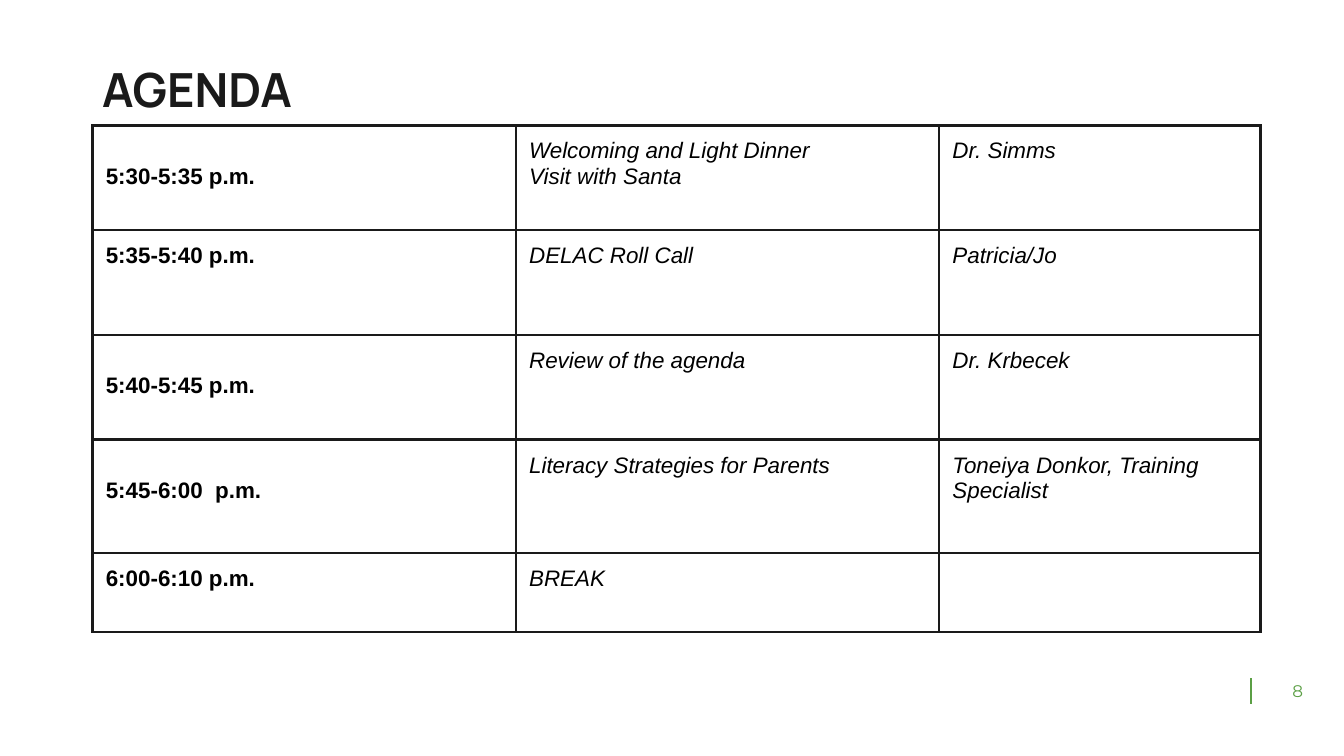
from lxml import etree
from pptx import Presentation
from pptx.dml.color import RGBColor
from pptx.enum.shapes import MSO_CONNECTOR
from pptx.enum.text import MSO_ANCHOR, PP_ALIGN
from pptx.oxml.ns import qn
from pptx.util import Cm, Pt

INK = RGBColor(0x1A, 0x1A, 0x1A)
BLACK = RGBColor(0, 0, 0)
GREEN = RGBColor(0x5B, 0x9F, 0x45)

COLS = (8, 8, 6.07)
ROWS = (1.98, 1.98, 1.98, 2.14, 1.5)
PAD = 0.25
DROP = 0.48  # one line of 12 pt text

# time, topic, speaker, whether the time sits one line lower
AGENDA = [
    ("5:30-5:35 p.m.", "Welcoming and Light Dinner\nVisit with Santa", "Dr. Simms", True),
    ("5:35-5:40 p.m.", "DELAC Roll Call", "Patricia/Jo", False),
    ("5:40-5:45 p.m.", "Review of the agenda", "Dr. Krbecek", True),
    ("5:45-6:00  p.m.", "Literacy Strategies for Parents",
     "Toneiya Donkor, Training Specialist", True),
    ("6:00-6:10 p.m.", "BREAK", "", False),
]


def write(frame, text, font="Arial", size=12, color=BLACK, bold=False,
          italic=False, align=PP_ALIGN.LEFT, space=None):
    frame.word_wrap = True
    frame.text = text
    for para in frame.paragraphs:
        para.alignment = align
        para.line_spacing = space
        for part in (para, *para.runs):
            part.font.name = font
            part.font.size = Pt(size)
            part.font.color.rgb = color
            part.font.bold = bold
            part.font.italic = italic


def add_text(slide, box, text, anchor=MSO_ANCHOR.TOP, **style):
    frame = slide.shapes.add_textbox(*map(Cm, box)).text_frame
    frame.margin_left = frame.margin_right = Cm(0.18)
    frame.margin_top = frame.margin_bottom = Cm(0.1)
    frame.vertical_anchor = anchor
    write(frame, text, **style)


def add_rule(slide, x, top, end):
    rule = slide.shapes.add_connector(
        MSO_CONNECTOR.STRAIGHT, Cm(x), Cm(top), Cm(x), Cm(end))
    rule.line.color.rgb = GREEN
    rule.line.width = Pt(1)
    etree.SubElement(rule._element.spPr, qn("a:effectLst"))


def frame_cell(cell):
    """Draw the four borders, then leave the cell unfilled."""
    props = cell._tc.get_or_add_tcPr()
    for side in ("lnL", "lnR", "lnT", "lnB"):
        line = etree.SubElement(props, qn(f"a:{side}"), w=str(Pt(1.5)))
        fill = etree.SubElement(line, qn("a:solidFill"))
        etree.SubElement(fill, qn("a:srgbClr"), val=str(INK))
    cell.fill.background()


def add_agenda(slide, left, top):
    table = slide.shapes.add_table(
        len(ROWS), len(COLS), Cm(left), Cm(top),
        Cm(sum(COLS)), Cm(sum(ROWS))).table
    table.first_row = table.horz_banding = False
    for col, width in zip(table.columns, COLS):
        col.width = Cm(width)
    for row, height, (*texts, low) in zip(table.rows, ROWS, AGENDA):
        row.height = Cm(height)
        for i, (cell, text) in enumerate(zip(row.cells, texts)):
            is_time = i == 0
            cell.margin_left = cell.margin_right = Cm(PAD)
            cell.margin_top = Cm(PAD + DROP if is_time and low else PAD)
            cell.margin_bottom = Cm(PAD)
            write(cell.text_frame, text, bold=is_time, italic=not is_time)
            frame_cell(cell)


def main():
    deck = Presentation()
    deck.slide_width, deck.slide_height = Cm(25.4), Cm(14.29)
    slide = deck.slides.add_slide(deck.slide_layouts[6])
    add_rule(slide, 23.65, 12.82, 13.31)
    add_text(slide, (23.65, 12.77, 1.75, 0.58), "8", MSO_ANCHOR.MIDDLE,
             font="Montserrat", size=9, color=GREEN, align=PP_ALIGN.CENTER)
    add_text(slide, (1.75, 1.17, 21.9, 1.19), "AGENDA", font="Manrope",
             size=25.2, color=INK, bold=True, space=0.9)
    add_agenda(slide, 1.75, 2.37)
    deck.save("out.pptx")


if __name__ == "__main__":
    main()
